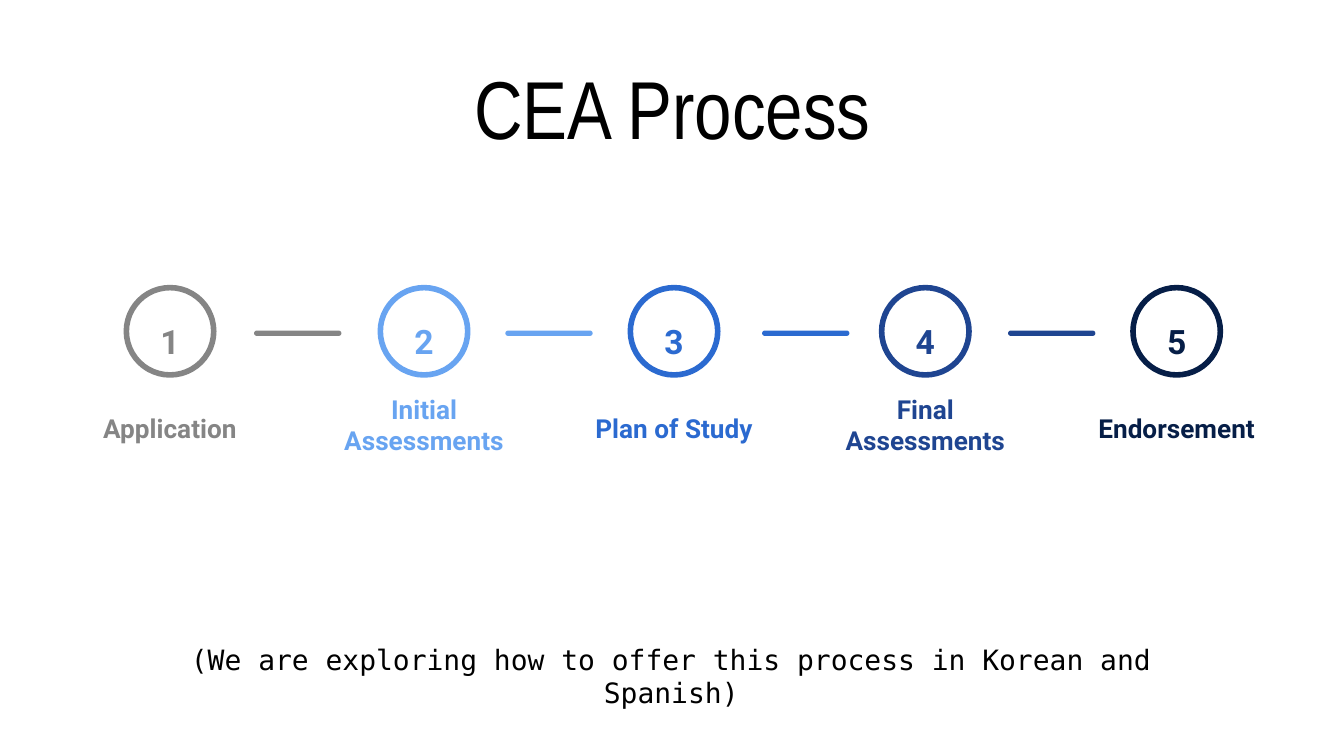
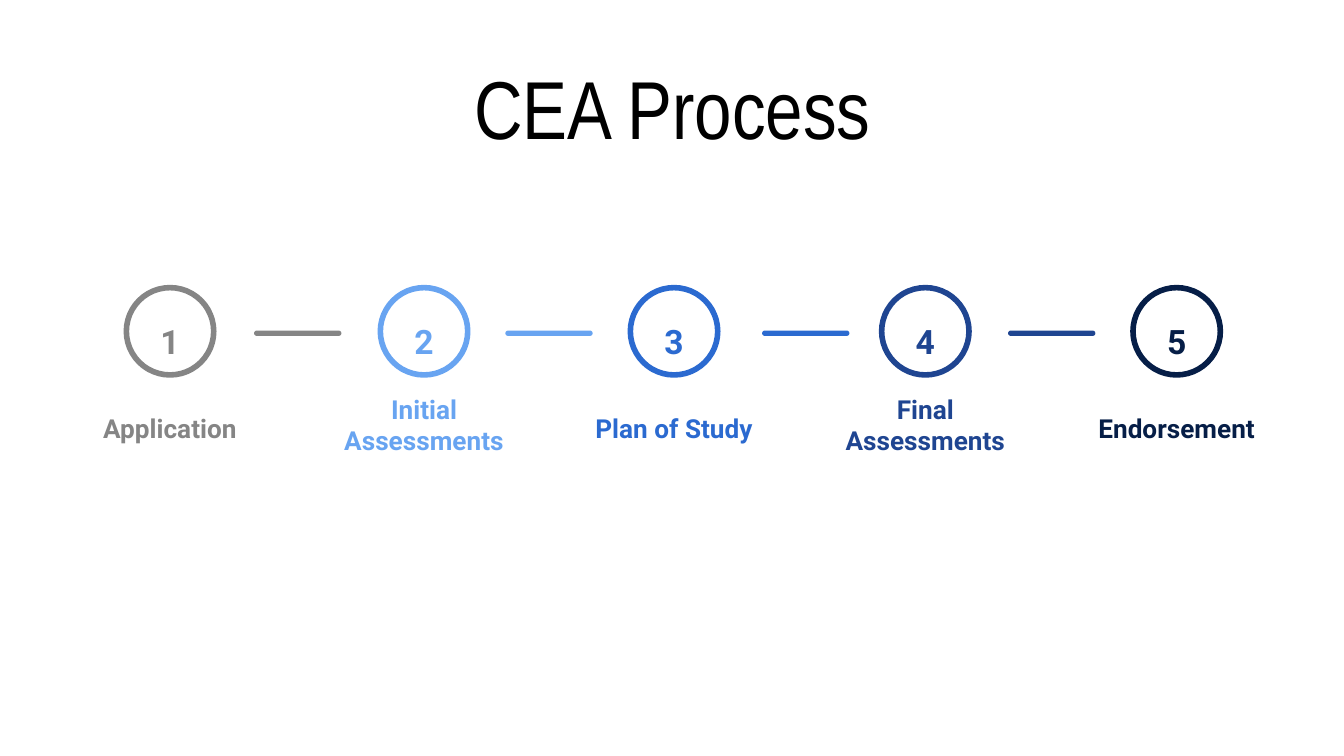
from dataclasses import dataclass
from typing import Optional

from pptx import Presentation
from pptx.dml.color import RGBColor
from pptx.enum.shapes import MSO_SHAPE
from pptx.enum.text import MSO_ANCHOR, MSO_AUTO_SIZE, PP_ALIGN
from pptx.shapes.group import GroupShape
from pptx.slide import Slide
from pptx.text.text import TextFrame
from pptx.util import Inches, Pt

BLACK = RGBColor(0x00, 0x00, 0x00)
WHITE = RGBColor(0xFF, 0xFF, 0xFF)
GREY = RGBColor(0x85, 0x85, 0x85)
SKY = RGBColor(0x68, 0xA4, 0xF1)
BLUE = RGBColor(0x2B, 0x6A, 0xD0)
ROYAL = RGBColor(0x1F, 0x45, 0x91)
NAVY = RGBColor(0x06, 0x1E, 0x47)

TITLE_FONT = "Arial Narrow"
STEP_FONT = "Roboto"
NOTE_FONT = "DejaVu Sans Mono"

SLIDE_WIDTH = Inches(10)
SLIDE_HEIGHT = SLIDE_WIDTH * 9 // 16
TITLE_ONLY_LAYOUT = 5
INSET = Inches(0.1)
CIRCLE_TOP = Inches(2.14)
CIRCLE_SIZE = Inches(0.65)
NUMBER_TOP = Inches(2.24)
NUMBER_WIDTH = Inches(0.48)
NUMBER_HEIGHT = Inches(0.35)
LABEL_HEIGHT = Inches(0.49)
ONE_LINE_LABEL_TOP = Inches(2.91)
TWO_LINE_LABEL_TOP = Inches(3)
BAR_TOP = Inches(2.46)
BAR_WIDTH = Inches(0.65)
BAR_HEIGHT = Inches(0.04)

TITLE = "CEA Process"
LANGUAGE_NOTE = "(We are exploring how to offer this process in Korean and Spanish)"


@dataclass(frozen=True)
class Step:
    """One stage; bar_left places the bar that leads on to the next stage."""
    label: str
    color: RGBColor
    circle_left: float
    bar_left: Optional[float] = None
    label_width: float = 1.68
    two_lines: bool = False


STEPS = (
    Step("Application", GREY, 0.94, 1.89, label_width=1.73),
    Step("Initial Assessments", SKY, 2.83, 3.76, two_lines=True),
    Step("Plan of Study", BLUE, 4.69, 5.67),
    Step("Final Assessments", ROYAL, 6.56, 7.5, two_lines=True),
    Step("Endorsement", NAVY, 8.43),
)


def write_centred(frame: TextFrame, text: str, font: str, size: float,
                  color: RGBColor, bold: bool = False, line_spacing: float = 1.0,
                  space_after: float = 0,
                  anchor: MSO_ANCHOR = MSO_ANCHOR.TOP) -> None:
    frame.word_wrap = True
    frame.auto_size = MSO_AUTO_SIZE.NONE
    frame.vertical_anchor = anchor
    frame.margin_left = frame.margin_right = INSET
    frame.margin_top = frame.margin_bottom = INSET
    paragraph = frame.paragraphs[0]
    paragraph.alignment = PP_ALIGN.CENTER
    paragraph.line_spacing = line_spacing
    paragraph.space_after = Pt(space_after)
    run = paragraph.add_run()
    run.text = text
    run.font.name = font
    run.font.size = Pt(size)
    run.font.bold = bold
    run.font.color.rgb = color


def add_circle(group: GroupShape, step: Step) -> None:
    circle = group.shapes.add_shape(MSO_SHAPE.OVAL, Inches(step.circle_left),
                                    CIRCLE_TOP, CIRCLE_SIZE, CIRCLE_SIZE)
    circle.shadow.inherit = False
    circle.fill.background()
    circle.line.color.rgb = step.color
    circle.line.width = Pt(3)


def add_step(slide: Slide, number: int, step: Step) -> None:
    """Group a numbered circle with the label centred under it."""
    group = slide.shapes.add_group_shape()
    add_circle(group, step)
    centre = Inches(step.circle_left) + CIRCLE_SIZE // 2

    number_box = group.shapes.add_textbox(centre - NUMBER_WIDTH // 2, NUMBER_TOP,
                                          NUMBER_WIDTH, NUMBER_HEIGHT)
    write_centred(number_box.text_frame, str(number), STEP_FONT, 18, step.color,
                  bold=True, line_spacing=1.15, space_after=16)

    label_width = Inches(step.label_width)
    label_top = TWO_LINE_LABEL_TOP if step.two_lines else ONE_LINE_LABEL_TOP
    label_box = group.shapes.add_textbox(centre - label_width // 2, label_top,
                                         label_width, LABEL_HEIGHT)
    write_centred(label_box.text_frame, step.label, STEP_FONT, 14, step.color,
                  bold=True, line_spacing=1.0 if step.two_lines else 1.15,
                  anchor=MSO_ANCHOR.BOTTOM)


def add_bar(slide: Slide, left: float, color: RGBColor) -> None:
    bar = slide.shapes.add_shape(MSO_SHAPE.ROUNDED_RECTANGLE, Inches(left),
                                 BAR_TOP, BAR_WIDTH, BAR_HEIGHT)
    bar.adjustments[0] = 0.5
    bar.shadow.inherit = False
    bar.fill.solid()
    bar.fill.fore_color.rgb = color
    bar.line.fill.background()


def add_title(slide: Slide) -> None:
    title = slide.shapes.title
    title.left, title.top = Inches(0.41), Inches(0.33)
    title.width, title.height = Inches(9.19), Inches(1.05)
    write_centred(title.text_frame, TITLE, TITLE_FONT, 44, BLACK)


def add_note(slide: Slide, note: str) -> None:
    note_box = slide.shapes.add_textbox(Inches(0.77), Inches(4.68),
                                        Inches(8.45), Inches(0.75))
    write_centred(note_box.text_frame, note, NOTE_FONT, 15, BLACK)


def add_process_slide(deck: Presentation, note: Optional[str] = None) -> None:
    slide = deck.slides.add_slide(deck.slide_layouts[TITLE_ONLY_LAYOUT])
    slide.background.fill.solid()
    slide.background.fill.fore_color.rgb = WHITE
    add_title(slide)
    for number, step in enumerate(STEPS, start=1):
        add_step(slide, number, step)
        if step.bar_left is not None:
            add_bar(slide, step.bar_left, step.color)
    if note:
        add_note(slide, note)


def main() -> None:
    deck = Presentation()
    deck.slide_width = SLIDE_WIDTH
    deck.slide_height = SLIDE_HEIGHT
    add_process_slide(deck, LANGUAGE_NOTE)
    add_process_slide(deck)
    deck.save("out.pptx")


if __name__ == "__main__":
    main()
